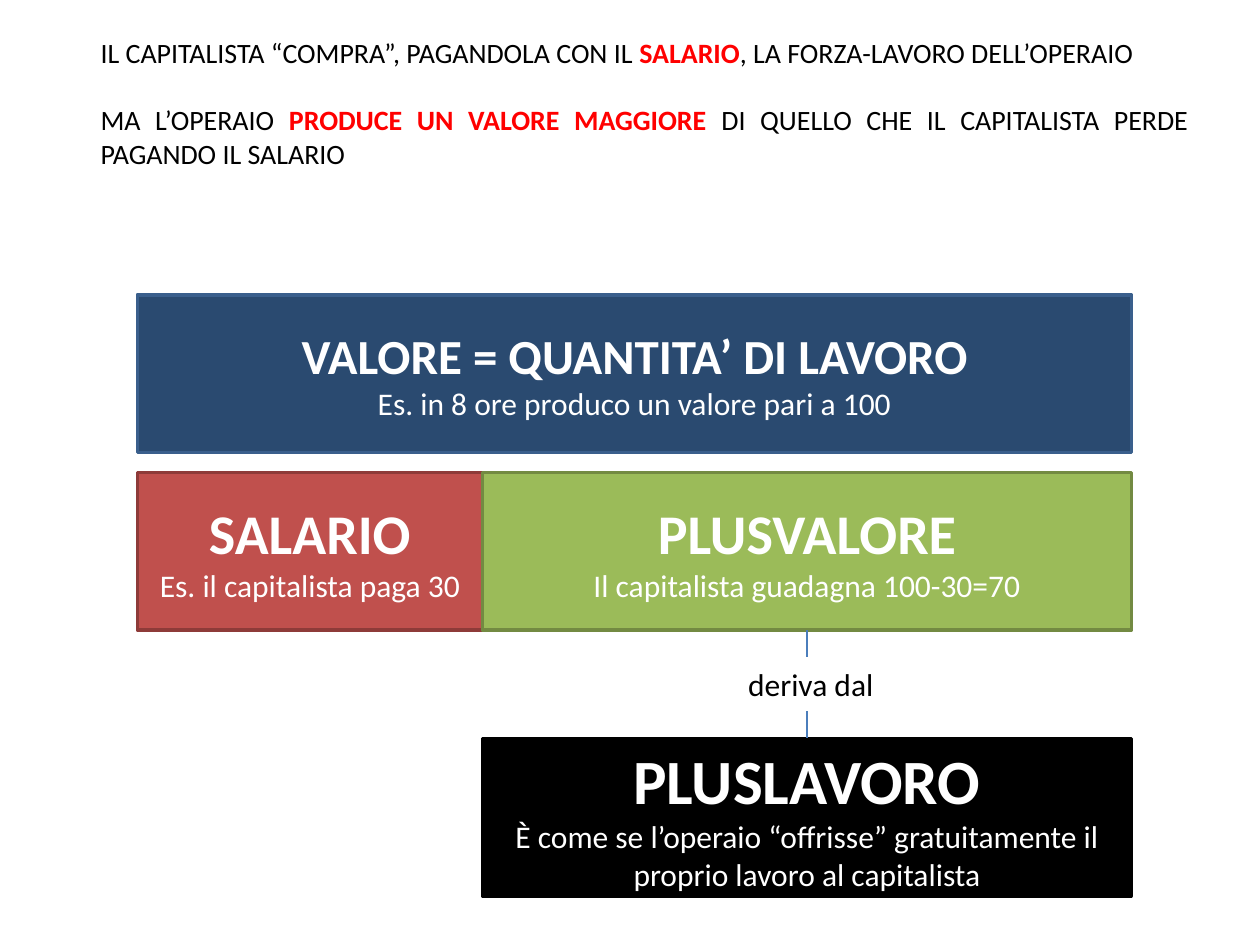
from lxml import etree
from pptx import Presentation
from pptx.dml.color import RGBColor
from pptx.enum.shapes import MSO_CONNECTOR, MSO_SHAPE
from pptx.enum.text import MSO_ANCHOR, PP_ALIGN
from pptx.oxml.ns import qn
from pptx.util import Inches, Pt

FONT = "Calibri"
COLORS = {
    "black": "000000", "white": "FFFFFF", "emphasis": "FF0000",
    "value": "2A4A70", "value_edge": "3A5F8C",
    "wage": "C0504D", "wage_edge": "8E3B39",
    "surplus": "9BBB59", "surplus_edge": "738A42",
    "link": "4B7EBC",
}
LEFT, SPLIT, RIGHT = 1.09, 3.83, 8.98
BOX_HEIGHT = 1.25
VALUE_TOP, SHARES_TOP, LABOUR_TOP = 2.34, 3.75, 5.86


def rgb(name):
    return RGBColor.from_string(COLORS[name])


def style(run, size, color, bold=False):
    run.font.name = FONT
    run.font.size = Pt(size)
    run.font.bold = bold
    run.font.color.rgb = rgb(color)


def add_intro(slide, left, top, width, height):
    """Two justified statements; each piece is (text, emphasised)."""
    statements = [
        [("IL CAPITALISTA “COMPRA”, PAGANDOLA CON IL ", False),
         ("SALARIO", True),
         (", LA FORZA-LAVORO DELL’OPERAIO", False)],
        [("MA L’OPERAIO ", False),
         ("PRODUCE UN VALORE MAGGIORE ", True),
         ("DI QUELLO CHE IL CAPITALISTA PERDE PAGANDO IL SALARIO", False)],
    ]
    intro = slide.shapes.add_textbox(
        Inches(left), Inches(top), Inches(width), Inches(height)).text_frame
    intro.word_wrap = True
    for index, pieces in enumerate(statements):
        statement = intro.add_paragraph() if index else intro.paragraphs[0]
        statement.alignment = PP_ALIGN.JUSTIFY
        if index:
            statement.space_before = Pt(19.5)
        for text, emphasised in pieces:
            run = statement.add_run()
            run.text = text
            style(run, 16, "emphasis" if emphasised else "black", emphasised)


def add_box(slide, left, top, width, height, fill, edge, lines):
    """Centred box; each line is (text, size, colour, bold)."""
    box = slide.shapes.add_shape(
        MSO_SHAPE.RECTANGLE,
        Inches(left), Inches(top), Inches(width), Inches(height))
    box.shadow.inherit = False
    box.fill.solid()
    box.fill.fore_color.rgb = rgb(fill)
    box.line.color.rgb = rgb(edge)
    box.line.width = Pt(2)
    frame = box.text_frame
    frame.word_wrap = True
    frame.vertical_anchor = MSO_ANCHOR.MIDDLE
    frame.text = "\n".join(line[0] for line in lines)
    for paragraph, (_, size, color, bold) in zip(frame.paragraphs, lines):
        paragraph.alignment = PP_ALIGN.CENTER
        style(paragraph.runs[0], size, color, bold)


def add_concept(slide, left, top, right, fill, edge, title, size, example):
    add_box(slide, left, top, right - left, BOX_HEIGHT, fill, edge,
            [(title, size, "white", True), (example, 18, "white", False)])


def add_derivation(slide, x, top, bottom):
    """Vertical link with its label laid over the middle."""
    link = slide.shapes.add_connector(
        MSO_CONNECTOR.STRAIGHT,
        Inches(x), Inches(top), Inches(x), Inches(bottom))
    link.line.color.rgb = rgb("link")
    link.line.width = Pt(0.75)
    etree.SubElement(link._element.spPr, qn("a:effectLst"))
    width, height = 3.2, 0.4
    add_box(slide, x + 0.03 - width / 2, (top + bottom - height) / 2,
            width, height, "white", "white",
            [("deriva dal", 18, "black", False)])


def main():
    prs = Presentation()
    prs.slide_width, prs.slide_height = Inches(10), Inches(7.5)
    slide = prs.slides.add_slide(prs.slide_layouts[6])

    add_intro(slide, 0.7, 0.23, 8.83, 1.18)

    # Total value, then its two shares
    add_concept(slide, LEFT, VALUE_TOP, RIGHT, "value", "value_edge",
                "VALORE = QUANTITA’ DI LAVORO", 28,
                "Es. in 8 ore produco un valore pari a 100")
    add_concept(slide, LEFT, SHARES_TOP, SPLIT, "wage", "wage_edge",
                "SALARIO", 32, "Es. il capitalista paga 30")
    add_concept(slide, SPLIT, SHARES_TOP, RIGHT, "surplus", "surplus_edge",
                "PLUSVALORE", 32, "Il capitalista guadagna 100-30=70")

    # Source of the surplus value
    add_concept(slide, SPLIT, LABOUR_TOP, RIGHT, "black", "black",
                "PLUSLAVORO", 36,
                "È come se l’operaio “offrisse” gratuitamente il "
                "proprio lavoro al capitalista")
    add_derivation(slide, (SPLIT + RIGHT) / 2,
                   SHARES_TOP + BOX_HEIGHT, LABOUR_TOP)

    prs.save("out.pptx")


if __name__ == "__main__":
    main()
